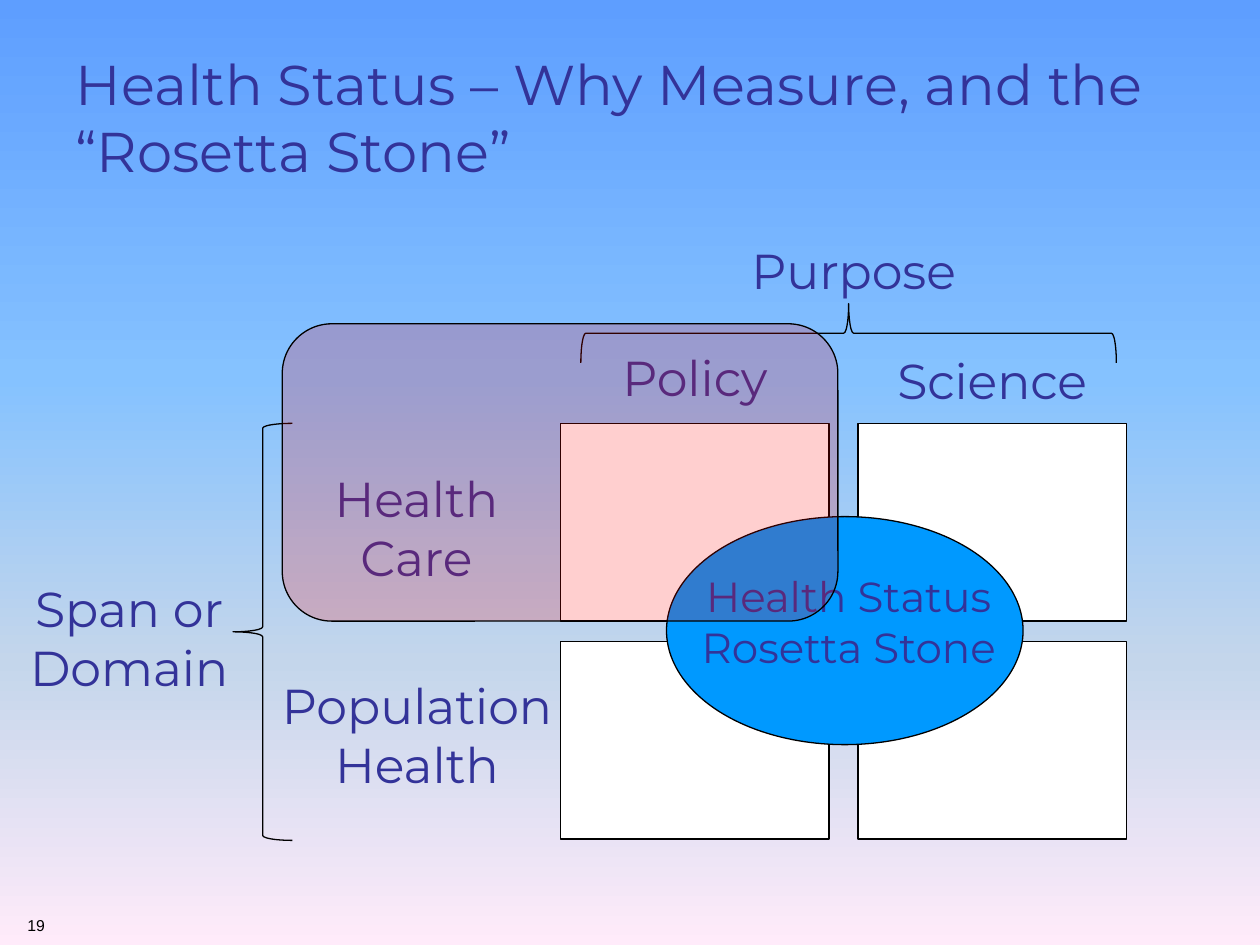
"""Build the Health Status "Rosetta Stone" slide."""
from lxml import etree
from pptx import Presentation
from pptx.dml.color import RGBColor
from pptx.enum.shapes import MSO_SHAPE
from pptx.enum.text import MSO_ANCHOR, MSO_AUTO_SIZE, PP_ALIGN
from pptx.oxml.ns import qn
from pptx.util import Inches, Pt

INDIGO = RGBColor(0x33, 0x33, 0x99)
BLACK = RGBColor(0, 0, 0)
WHITE = RGBColor(0xFF, 0xFF, 0xFF)
AZURE = RGBColor(0x00, 0x99, 0xFF)
RED = RGBColor(0xFF, 0, 0)
SKY_STOPS = [
    (0, RGBColor(0x5E, 0x9E, 0xFF)),
    (40, RGBColor(0x85, 0xC2, 0xFF)),
    (70, RGBColor(0xC4, 0xD6, 0xEB)),
    (100, RGBColor(0xFF, 0xEB, 0xFA)),
]

prs = Presentation()
prs.slide_width, prs.slide_height = Inches(10), Inches(7.5)
slide = prs.slides.add_slide(prs.slide_layouts[5])


def add_label(text, left, top, width, height, size=28, font="Montserrat",
              color=INDIGO, align=PP_ALIGN.CENTER):
    label = slide.shapes.add_textbox(Inches(left), Inches(top), Inches(width), Inches(height))
    label.text_frame.word_wrap = True
    label.text_frame.text = text
    paragraph = label.text_frame.paragraphs[0]
    paragraph.alignment = align
    paragraph.font.size = Pt(size)
    paragraph.font.name = font
    paragraph.font.color.rgb = color


def add_outlined(kind, left, top, width, height, fill=None):
    outlined = slide.shapes.add_shape(kind, Inches(left), Inches(top), Inches(width), Inches(height))
    outlined.shadow.inherit = False
    if fill is None:
        outlined.fill.background()
    else:
        outlined.fill.solid()
        outlined.fill.fore_color.rgb = fill
    outlined.line.color.rgb = BLACK
    outlined.line.width = Pt(0.75)
    return outlined


sky = slide.background.fill
sky.gradient()
sky.gradient_angle = 270
stop_list = next(slide.background._cSld.iter(qn("a:gsLst")))
for old_stop in list(stop_list):
    stop_list.remove(old_stop)
for percent, color in SKY_STOPS:
    stop = etree.SubElement(stop_list, qn("a:gs"), pos=str(percent * 1000))
    etree.SubElement(stop, qn("a:srgbClr"), val=str(color))

title = slide.shapes.title
title.left, title.top, title.width, title.height = Inches(0.5), Inches(0.3), Inches(9), Inches(1.25)
title.text_frame.text = "Health Status – Why Measure, and the “Rosetta Stone”"
title.text_frame.auto_size = MSO_AUTO_SIZE.NONE
title.text_frame.vertical_anchor = MSO_ANCHOR.MIDDLE
heading = title.text_frame.paragraphs[0]
heading.alignment = PP_ALIGN.LEFT
heading.font.size = Pt(32)
heading.font.name = "Montserrat"
heading.font.color.rgb = INDIGO

add_label("19", 0.12, 7.22, 1.66, 0.24, 9, "Arial", BLACK, PP_ALIGN.LEFT)
add_label("Purpose", 5.71, 1.86, 2.13, 0.57)
add_label("Span or Domain", 0.04, 4.54, 1.97, 1.04)

add_outlined(MSO_SHAPE.LEFT_BRACE, 1.85, 3.36, 0.47, 3.31)
purpose_brace = add_outlined(MSO_SHAPE.LEFT_BRACE, 6.5, 0.52, 0.47, 4.25)
purpose_brace.rotation = 90

for top in (3.36, 5.09):
    for left in (4.45, 6.81):
        add_outlined(MSO_SHAPE.RECTANGLE, left, top, 2.13, 1.57, WHITE)

add_label("Policy", 4.69, 2.71, 1.65, 0.57)
add_label("Science", 6.81, 2.73, 2.13, 0.57)
add_label("Health Care", 2.24, 3.67, 2.13, 1.04)
add_label("Population Health", 2.01, 5.31, 2.6, 1.04)

add_outlined(MSO_SHAPE.OVAL, 5.29, 4.1, 2.83, 1.81, AZURE)
add_label("Health Status Rosetta Stone", 5.16, 4.48, 3.15, 0.91, 24)

care_policy = add_outlined(MSO_SHAPE.ROUNDED_RECTANGLE, 2.24, 2.57, 4.41, 2.36, RED)
care_tint = care_policy.fill._xPr.find(qn("a:solidFill")).find(qn("a:srgbClr"))
etree.SubElement(care_tint, qn("a:alpha"), val="19000")

prs.save("out.pptx")
